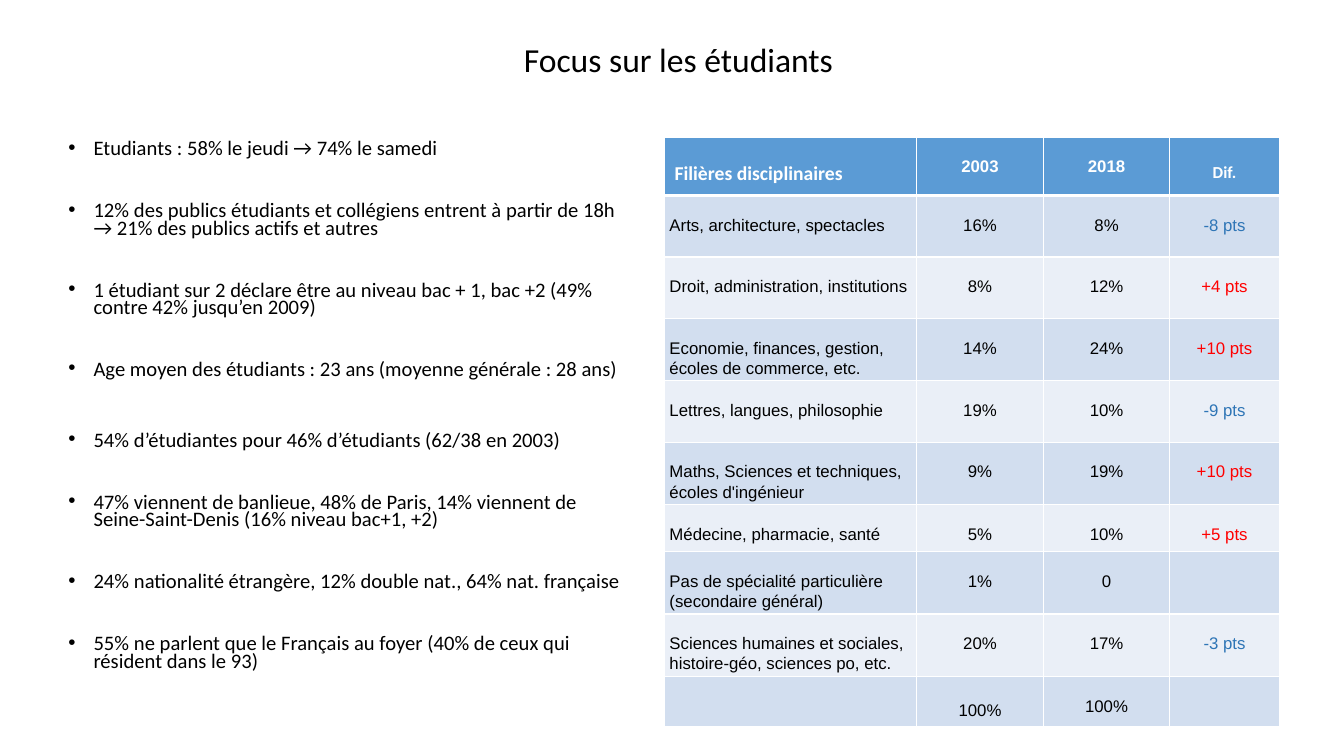
"""Build the slide about the students among the library's visitors."""
from lxml import etree
from pptx import Presentation
from pptx.dml.color import RGBColor
from pptx.enum.text import MSO_ANCHOR, PP_ALIGN
from pptx.oxml.ns import qn
from pptx.util import Inches, Pt

LEFT, CENTER = PP_ALIGN.LEFT, PP_ALIGN.CENTER
MIDDLE, TOP = MSO_ANCHOR.MIDDLE, MSO_ANCHOR.TOP
COLORS = {
    "text": "000000",
    "white": "FFFFFF",
    "header": "5B9BD5",
    "band_dark": "D2DEEF",
    "band_light": "EAEFF7",
    "rise": "FF0000",
    "fall": "2E75B6",
}
BULLETS = [
    "Etudiants : 58% le jeudi → 74% le samedi",
    "12% des publics étudiants et collégiens entrent à partir de 18h → 21% des publics actifs et autres",
    "1 étudiant sur 2 déclare être au niveau bac + 1, bac +2 (49% contre 42% jusqu’en 2009)",
    "Age moyen des étudiants : 23 ans (moyenne générale : 28 ans)",
    "54% d’étudiantes pour 46% d’étudiants (62/38 en 2003)",
    "47% viennent de banlieue, 48% de Paris, 14% viennent de Seine-Saint-Denis (16% niveau bac+1, +2)",
    "24% nationalité étrangère, 12% double nat., 64% nat. française",
    "55% ne parlent que le Français au foyer (40% de ceux qui résident dans le 93)",
]
BULLET_GAPS = [0, 32, 32, 32, 38, 32, 32, 32]
COLUMN_WIDTHS = [2.5, 1.26, 1.25, 1.09]
ROW_HEIGHTS = [0.58, 0.61, 0.61, 0.58, 0.61, 0.59, 0.47, 0.59, 0.59, 0.49]
ROWS = [
    ("Filières disciplinaires", "2003", "2018", "Dif."),
    ("Arts, architecture, spectacles", "16%", "8%", "-8 pts"),
    ("Droit, administration, institutions", "8%", "12%", "+4 pts"),
    ("Economie, finances, gestion, écoles de commerce, etc.", "14%", "24%", "+10 pts"),
    ("Lettres, langues, philosophie", "19%", "10%", "-9 pts"),
    ("Maths, Sciences et techniques, écoles d'ingénieur", "9%", "19%", "+10 pts"),
    ("Médecine, pharmacie, santé", "5%", "10%", "+5 pts"),
    ("Pas de spécialité particulière (secondaire général)", "1%", "0", ""),
    ("Sciences humaines et sociales, histoire-géo, sciences po, etc.", "20%", "17%", "-3 pts"),
    ("", "100%", "100%", ""),
]
ROOMY_CELLS = {(0, 0), (0, 3), (len(ROWS) - 1, 1)}


def rgb(name):
    """Return the named colour."""
    return RGBColor.from_string(COLORS[name])


def write(p, text, size=12, font="Calibri", color="text", bold=False,
          align=LEFT, spacing=1.0, before=0):
    """Write formatted text into a paragraph."""
    p.alignment, p.line_spacing, p.space_before = align, spacing, Pt(before)
    r = p.add_run()
    r.text = text
    r.font.size, r.font.name, r.font.bold = Pt(size), font, bold
    r.font.color.rgb = rgb(color)


def add_text_frame(s, left, top, width, height, anchor=TOP):
    """Add a wrapping text box and return its text frame."""
    sp = s.shapes.add_textbox(Inches(left), Inches(top), Inches(width), Inches(height))
    tf = sp.text_frame
    tf.word_wrap, tf.vertical_anchor = True, anchor
    return tf


def add_bullet(p):
    """Give a paragraph a hanging round bullet."""
    pPr = p._p.get_or_add_pPr()
    pPr.set("marL", str(Inches(0.25)))
    pPr.set("indent", str(Inches(-0.25)))
    etree.SubElement(pPr, qn("a:buFont"), typeface="Arial")
    etree.SubElement(pPr, qn("a:buChar"), char="•")


def add_bullets(s):
    """Add the list of key figures."""
    tf = add_text_frame(s, 0.58, 1.36, 5.67, 5.92)
    for i, (text, gap) in enumerate(zip(BULLETS, BULLET_GAPS)):
        p = tf.paragraphs[0] if i == 0 else tf.add_paragraph()
        write(p, text, size=14.7, spacing=0.7, before=gap)
        add_bullet(p)


def set_borders(cell, bottom):
    """Draw white borders round a cell, with its own bottom width."""
    tcPr = cell._tc.get_or_add_tcPr()
    for side, width in (("L", 1), ("R", 1), ("T", 1), ("B", bottom)):
        ln = etree.SubElement(tcPr, qn(f"a:ln{side}"), w=str(Pt(width)))
        fill = etree.SubElement(ln, qn("a:solidFill"))
        etree.SubElement(fill, qn("a:srgbClr"), val=COLORS["white"])


def cell_format(row, col, text):
    """Return the text format for a table position."""
    fmt = {"font": "Arial", "align": CENTER if col else LEFT}
    if row == 0:
        fmt.update(color="white", bold=True)
        if col in (0, 3):
            fmt["font"] = "Calibri"
        if col == 0:
            fmt["size"] = 14
    elif col == 3:
        fmt["color"] = "rise" if text.startswith("+") else "fall"
    if (row, col) not in ROOMY_CELLS:
        fmt["spacing"] = 1.07
    return fmt


def fill_cell(cell, row, col, text):
    """Colour a table cell and write its text."""
    set_borders(cell, 3 if row == 0 else 1)
    cell.fill.solid()
    band = "band_dark" if row % 2 else "band_light"
    cell.fill.fore_color.rgb = rgb("header" if row == 0 else band)
    if not text:
        return
    if (row, col) in ROOMY_CELLS:
        cell.margin_top = Inches(0.25)
    else:
        cell.margin_left = cell.margin_right = Inches(0.05)
        cell.margin_top, cell.margin_bottom = Inches(0.19), 0
    write(cell.text_frame.paragraphs[0], text, **cell_format(row, col, text))


def add_fields_table(s):
    """Add the table of fields of study."""
    table = s.shapes.add_table(
        len(ROWS), len(COLUMN_WIDTHS), Inches(6.59), Inches(1.36),
        Inches(sum(COLUMN_WIDTHS)), Inches(sum(ROW_HEIGHTS))).table
    for column, width in zip(table.columns, COLUMN_WIDTHS):
        column.width = Inches(width)
    for i, (values, height) in enumerate(zip(ROWS, ROW_HEIGHTS)):
        table.rows[i].height = Inches(height)
        for j, text in enumerate(values):
            fill_cell(table.cell(i, j), i, j, text)


def main():
    """Build and save the slide."""
    prs = Presentation()
    prs.slide_width, prs.slide_height = Inches(13.33), Inches(7.5)
    s = prs.slides.add_slide(prs.slide_layouts[6])
    title = add_text_frame(s, 0.98, 0.19, 11.5, 0.85, anchor=MIDDLE)
    write(title.paragraphs[0], "Focus sur les étudiants", size=24, align=CENTER, spacing=0.9)
    add_bullets(s)
    add_fields_table(s)
    prs.save("out.pptx")


if __name__ == "__main__":
    main()
